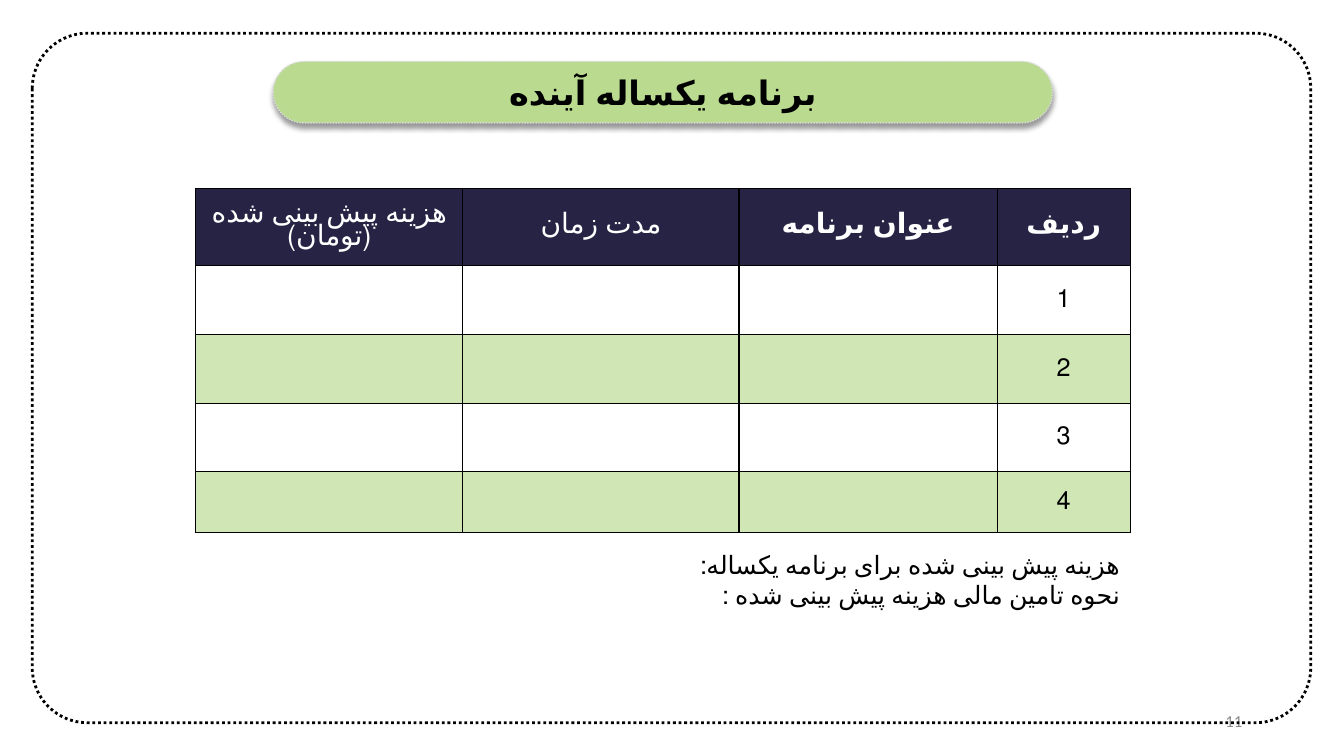
from lxml.etree import SubElement
from pptx import Presentation
from pptx.dml.color import RGBColor
from pptx.enum.dml import MSO_LINE
from pptx.enum.lang import MSO_LANGUAGE_ID as LANG
from pptx.enum.shapes import MSO_SHAPE
from pptx.enum.text import MSO_ANCHOR, MSO_AUTO_SIZE, PP_ALIGN
from pptx.oxml import parse_xml
from pptx.oxml.ns import nsdecls, qn
from pptx.util import Inches, Pt

BLACK, WHITE, GREY = "000000", "FFFFFF", "8C8C8C"
NAVY, GREEN, PALE, SILVER = "262344", "B9DA8F", "D1E6B5", "D9D9D9"
HEADERS = [
    ("هزینه پیش بینی شده (تومان)", False),
    ("مدت زمان", False),
    ("عنوان برنامه", True),
    ("ردیف", True),
]
COL_WIDTHS = [2.65, 2.74, 2.56, 1.32]
ROW_HEIGHTS = [0.76, 0.69, 0.68, 0.68, 0.6]
NOTES = ["هزینه پیش بینی شده برای برنامه یکساله:", "نحوه تامین مالی هزینه پیش بینی شده :"]


def rgb(value):
    """Turn a hex string into a colour."""
    return RGBColor.from_string(value)


class PlanSlide:
    """Hold the slide and its style, and add each kind of element."""

    font = "Calibri"

    def __init__(self, prs):
        """Add a slide with a title and a body."""
        self.s = prs.slides.add_slide(prs.slide_layouts[1])

    def place(self, sp, box):
        """Move a shape to left, top, width and height in inches."""
        sp.left, sp.top, sp.width, sp.height = map(Inches, box)

    def style(self, p, size, color=BLACK, bold=False, align=PP_ALIGN.CENTER, rtl=True):
        """Format one paragraph."""
        p.alignment = align
        p.font.name, p.font.size, p.font.bold = self.font, Pt(size), bold
        p.font.color.rgb = rgb(color)
        if rtl:
            p._p.get_or_add_pPr().set("rtl", "1")
            for r in p.runs:
                r.font.language_id = LANG.FARSI

    def rounded(self, box, radius, color, width):
        """Add a rounded rectangle with a dotted outline and no fill."""
        sp = self.s.shapes.add_shape(MSO_SHAPE.ROUNDED_RECTANGLE, *map(Inches, box))
        sp.adjustments[0] = radius
        sp.shadow.inherit = False
        sp.fill.background()
        sp.line.color.rgb = rgb(color)
        sp.line.width = Pt(width)
        sp.line.dash_style = MSO_LINE.ROUND_DOT
        return sp

    def title(self, text, box):
        """Set the title on a shadowed pill."""
        sp = self.s.shapes.title
        self.place(sp, box)
        tf = sp.text_frame
        tf.text = text
        tf.vertical_anchor = MSO_ANCHOR.MIDDLE
        self.style(tf.paragraphs[0], 24, bold=True)
        pill = self.rounded(box, 0.5, SILVER, 1)
        pill.fill.solid()
        pill.fill.fore_color.rgb = rgb(GREEN)
        effects = pill._element.spPr.find(qn("a:effectLst"))
        effects.append(parse_xml(
            f'<a:outerShdw {nsdecls("a")} blurRad="{Pt(4)}" dist="{Pt(3)}" '
            f'dir="5400000" rotWithShape="0"><a:srgbClr val="{BLACK}">'
            '<a:alpha val="40000"/></a:srgbClr></a:outerShdw>'))
        sp._element.addprevious(pill._element)

    def body(self, lines, box):
        """Fill the body with plain lines."""
        sp = self.s.placeholders[1]
        self.place(sp, box)
        tf = sp.text_frame
        tf.text = "\n".join(lines)
        tf.auto_size = MSO_AUTO_SIZE.SHAPE_TO_FIT_TEXT
        for p in tf.paragraphs:
            self.style(p, 18, align=PP_ALIGN.RIGHT)
            p.space_before = Pt(0)
            pPr = p._p.get_or_add_pPr()
            for name in ("marL", "marR", "indent"):
                pPr.set(name, "0")
            pPr.insert_element_before(
                parse_xml(f'<a:buNone {nsdecls("a")}/>'), "a:tabLst", "a:defRPr", "a:extLst")

    def number(self, text, box):
        """Add the slide number."""
        tf = self.s.shapes.add_textbox(*map(Inches, box)).text_frame
        tf.word_wrap = True
        tf.vertical_anchor = MSO_ANCHOR.MIDDLE
        tf.text = text
        self.style(tf.paragraphs[0], 12, GREY, align=PP_ALIGN.RIGHT, rtl=False)

    def cell(self, cell, fill, text, size, color, bold):
        """Fill, border and write one table cell."""
        tcPr = cell._tc.get_or_add_tcPr()
        for side in ("lnL", "lnR", "lnT", "lnB"):
            ln = SubElement(tcPr, qn(f"a:{side}"), w=str(Pt(1)))
            SubElement(SubElement(ln, qn("a:solidFill")), qn("a:srgbClr"), val=BLACK)
        cell.fill.solid()
        cell.fill.fore_color.rgb = rgb(fill)
        cell.vertical_anchor = MSO_ANCHOR.MIDDLE
        cell.text = text
        p = cell.text_frame.paragraphs[0]
        self.style(p, size, color, bold)
        return p

    def table(self, left, top):
        """Add the plan table with numbered rows."""
        box = (left, top, sum(COL_WIDTHS), sum(ROW_HEIGHTS))
        table = self.s.shapes.add_table(
            len(ROW_HEIGHTS), len(COL_WIDTHS), *map(Inches, box)).table
        table.first_row = table.horz_banding = False
        for col, width in zip(table.columns, COL_WIDTHS):
            col.width = Inches(width)
        for row, height in zip(table.rows, ROW_HEIGHTS):
            row.height = Inches(height)
        for c, (header, bold) in enumerate(HEADERS):
            p = self.cell(table.cell(0, c), NAVY, header, 20, WHITE, bold)
            p.line_spacing = 0.85
            for r in range(1, len(ROW_HEIGHTS)):
                text = str(r) if c == len(HEADERS) - 1 else ""
                self.cell(table.cell(r, c), WHITE if r % 2 else PALE, text, 18, BLACK, False)


def main():
    """Build and save the slide."""
    prs = Presentation()
    prs.slide_width, prs.slide_height = Inches(13.33), Inches(7.5)
    slide = PlanSlide(prs)
    slide.number("11", (9.42, 6.95, 3, 0.4))
    slide.title("برنامه یکساله آینده", (2.71, 0.61, 7.73, 0.61))
    slide.table(1.94, 1.87)
    slide.body(NOTES, (4.13, 5.4, 7.08, 0.71))
    slide.rounded((0.32, 0.33, 12.68, 6.84), 0.08, BLACK, 2)
    prs.save("out.pptx")


if __name__ == "__main__":
    main()
